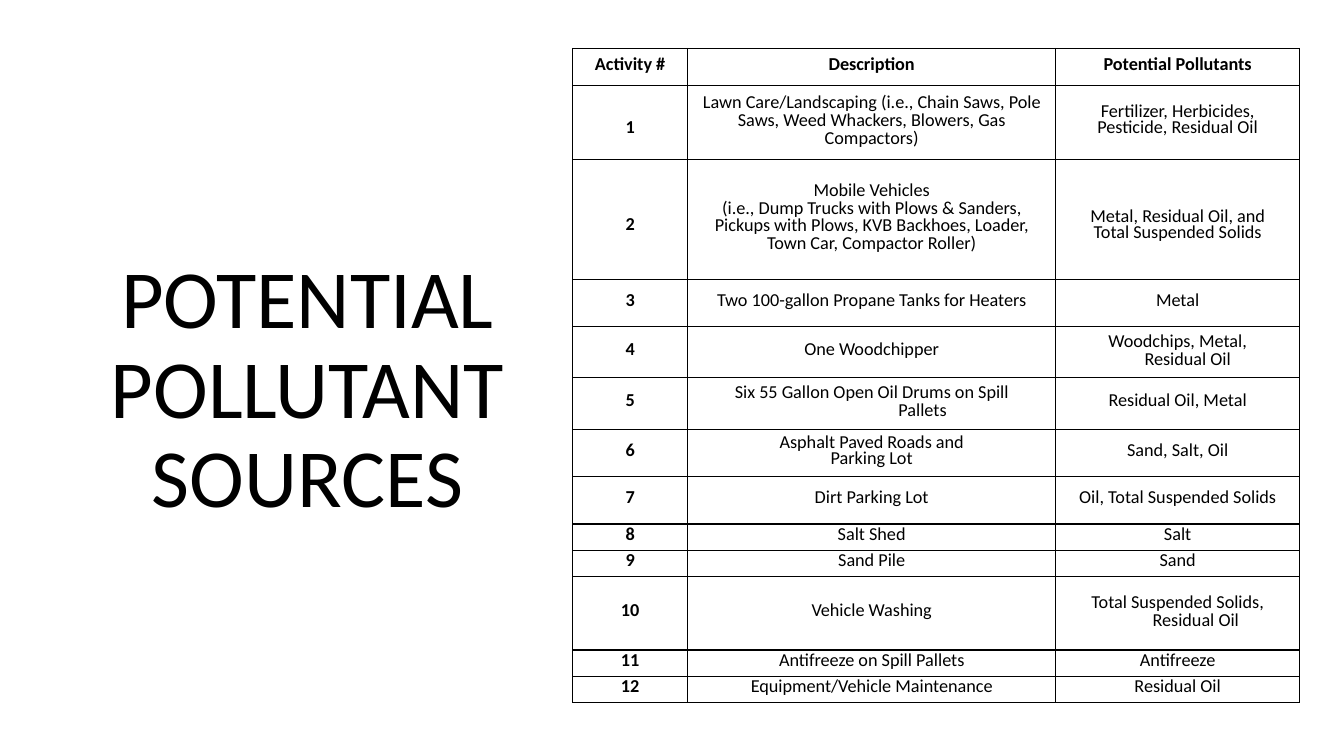
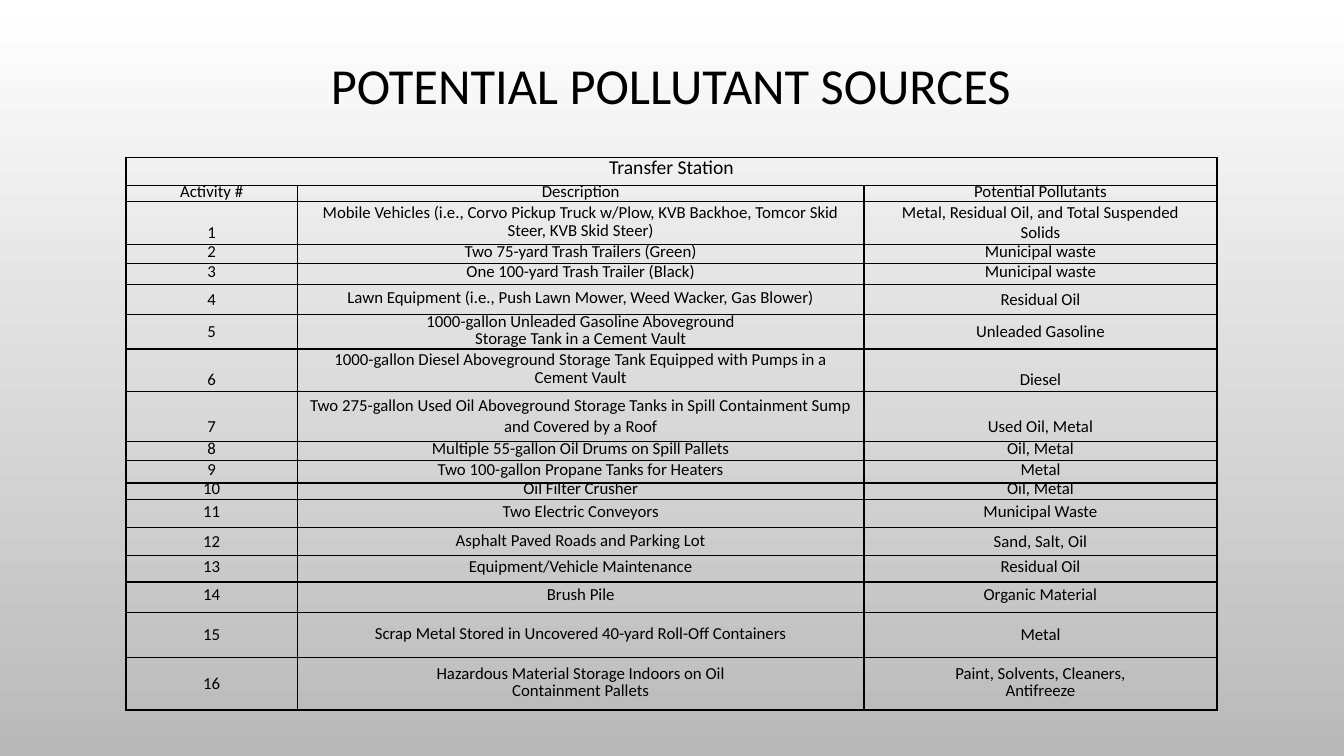
from lxml.etree import SubElement
from pptx import Presentation
from pptx.dml.color import RGBColor
from pptx.enum.text import MSO_ANCHOR, MSO_AUTO_SIZE, PP_ALIGN
from pptx.oxml.ns import qn
from pptx.util import Inches, Pt


def rgb(value):
    return RGBColor.from_string(value)


class Deck:
    FONT = "Calibri"
    INK = "000000"
    BORDER = 1
    LAST_LINE = 11.7
    UPPER_LINE = 12.4

    def __init__(self):
        self.prs = Presentation()
        self.prs.slide_width = Inches(13.33)
        self.prs.slide_height = Inches(7.5)
        self.s = None

    def slide(self, *colors):
        self.s = self.prs.slides.add_slide(self.prs.slide_layouts[5])
        fill = self.s.background.fill
        if len(colors) == 1:
            fill.solid()
            fill.fore_color.rgb = rgb(colors[0])
            return
        fill.gradient()
        fill.gradient_angle = 270
        for i, (stop, color) in enumerate(zip(fill.gradient_stops, colors)):
            stop.position = i
            stop.color.rgb = rgb(color)

    def style(self, p, size, bold=False):
        p.alignment = PP_ALIGN.CENTER
        for r in p.runs:
            r.font.name = self.FONT
            r.font.size = Pt(size)
            r.font.bold = bold
            r.font.color.rgb = rgb(self.INK)

    def title(self, text, box, size, anchor):
        sp = self.s.shapes.title
        sp.left, sp.top, sp.width, sp.height = map(Inches, box)
        tf = sp.text_frame
        tf.text = text
        tf.word_wrap = True
        tf.auto_size = MSO_AUTO_SIZE.NONE
        tf.vertical_anchor = anchor
        tf.paragraphs[0].line_spacing = 0.9
        self.style(tf.paragraphs[0], size)

    def borders(self, cell):
        tcPr = cell._tc.get_or_add_tcPr()
        for side in ("a:lnL", "a:lnR", "a:lnT", "a:lnB"):
            ln = SubElement(tcPr, qn(side), w=str(Pt(self.BORDER)))
            fill = SubElement(ln, qn("a:solidFill"))
            SubElement(fill, qn("a:srgbClr"), val=self.INK)
        cell.fill.background()

    def cell(self, cell, text, size, bold, pad, top=0, hang=0, **spacing):
        self.borders(cell)
        cell.vertical_anchor = MSO_ANCHOR.MIDDLE
        cell.margin_left = cell.margin_right = Inches(pad)
        cell.margin_top, cell.margin_bottom = Inches(top), 0
        tf = cell.text_frame
        tf.text = text
        for p in tf.paragraphs:
            if hang:
                pPr = p._p.get_or_add_pPr()
                pPr.set("marL", str(Inches(hang)))
                pPr.set("indent", str(-Inches(hang)))
            is_last = p.text == tf.paragraphs[-1].text
            line = spacing.get("line", self.LAST_LINE if is_last else self.UPPER_LINE)
            if line:
                p.line_spacing = Pt(line)
            self.style(p, size, bold)

    def table(self, left, top, widths, pads, rows, size, heading=None, bold=False):
        shape = self.s.shapes.add_table(
            len(rows), len(widths), Inches(left), Inches(top),
            Inches(sum(widths)), Inches(sum(row[0] for row in rows)))
        tbl = shape.table
        tbl.first_row = tbl.horz_banding = False
        for column, width in zip(tbl.columns, widths):
            column.width = Inches(width)
        for i, (height, *items) in enumerate(rows):
            tbl.rows[i].height = Inches(height)
            for j, item in enumerate(items):
                text, options = item if isinstance(item, tuple) else (item, {})
                is_strong = bold and (i == 0 or j == 0)
                options = {"size": size, "bold": is_strong, "pad": pads[j], **options}
                self.cell(tbl.cell(i, j), text, **options)
        if heading:
            tbl.cell(0, 0).merge(tbl.cell(0, len(widths) - 1))
            self.cell(tbl.cell(0, 0), heading, 14, False, pads[0])


TITLE = "POTENTIAL POLLUTANT SOURCES"
HEADER = ("Activity #", "Description", "Potential Pollutants")
WRAP = {"line": 12.7}
AUTO = {"line": None}
LOW = {"top": 0.16}
LOWER = {"top": 0.2, "line": None}

FACILITY = [
    (0.37, *HEADER),
    (0.73, ("1", LOW),
     ("Lawn Care/Landscaping (i.e., Chain Saws, Pole Saws, Weed Whackers, "
      "Blowers, Gas Compactors)", WRAP),
     ("Fertilizer, Herbicides, Pesticide, Residual Oil", {"pad": 0.24})),
    (1.19, ("2", LOW),
     ("Mobile Vehicles\n(i.e., Dump Trucks with Plows & Sanders, Pickups with Plows, "
      "KVB Backhoes, Loader, Town Car, Compactor Roller)", {"line": 12.5}),
     ("Metal, Residual Oil, and Total Suspended Solids", {"pad": 0.22, **LOW})),
    (0.47, "3", "Two 100-gallon Propane Tanks for Heaters", "Metal"),
    (0.51, "4", "One Woodchipper",
     ("Woodchips, Metal, Residual Oil", {"pad": 0.36, "hang": 0.2, **WRAP})),
    (0.51, "5",
     ("Six 55 Gallon Open Oil Drums on Spill Pallets",
      {"pad": 0.24, "hang": 1.01, **WRAP}),
     "Residual Oil, Metal"),
    (0.47, "6", "Asphalt Paved Roads and\nParking Lot", "Sand, Salt, Oil"),
    (0.47, "7", "Dirt Parking Lot", "Oil, Total Suspended Solids"),
    (0.26, "8", "Salt Shed", "Salt"),
    (0.26, "9", "Sand Pile", "Sand"),
    (0.73, "10", "Vehicle Washing",
     ("Total Suspended Solids, Residual Oil", {"pad": 0.2, "hang": 0.36, **WRAP})),
    (0.26, "11", "Antifreeze on Spill Pallets", "Antifreeze"),
    (0.26, "12", "Equipment/Vehicle Maintenance", "Residual Oil"),
]

TRANSFER_STATION = [
    (0.28, "", "", ""),
    (0.16, *HEADER),
    (0.42, ("1", LOWER),
     ("Mobile Vehicles (i.e., Corvo Pickup Truck w/Plow, KVB Backhoe, Tomcor Skid "
      "Steer, KVB Skid Steer)", {"pad": 0.2, **WRAP}),
     ("Metal, Residual Oil, and Total Suspended Solids", {"pad": 0.21, **AUTO})),
    (0.19, "2", "Two 75-yard Trash Trailers (Green)", "Municipal waste"),
    (0.21, "3", "One 100-yard Trash Trailer (Black)", "Municipal waste"),
    (0.3, ("4", AUTO),
     ("Lawn Equipment (i.e., Push Lawn Mower, Weed Wacker, Gas Blower)", WRAP),
     ("Residual Oil", AUTO)),
    (0.34, ("5", AUTO),
     "1000-gallon Unleaded Gasoline Aboveground\nStorage Tank in a Cement Vault",
     ("Unleaded Gasoline", AUTO)),
    (0.42, ("6", LOWER),
     ("1000-gallon Diesel Aboveground Storage Tank Equipped with Pumps in a "
      "Cement Vault", {"pad": 0.22, **WRAP}),
     ("Diesel", LOWER)),
    (0.5, ("7", LOWER),
     ("Two 275-gallon Used Oil Aboveground Storage Tanks in Spill Containment Sump "
      "and Covered by a Roof", AUTO),
     ("Used Oil, Metal", LOWER)),
    (0.19, "8", "Multiple 55-gallon Oil Drums on Spill Pallets", "Oil, Metal"),
    (0.22, "9", "Two 100-gallon Propane Tanks for Heaters", "Metal"),
    (0.16, "10", "Oil Filter Crusher", "Oil, Metal"),
    (0.28, "11", "Two Electric Conveyors", "Municipal Waste"),
    (0.28, ("12", AUTO), ("Asphalt Paved Roads and Parking Lot", WRAP),
     ("Sand, Salt, Oil", AUTO)),
    (0.26, "13", "Equipment/Vehicle Maintenance", "Residual Oil"),
    (0.3, "14", "Brush Pile", "Organic Material"),
    (0.45, ("15", AUTO),
     ("Scrap Metal Stored in Uncovered 40-yard Roll-Off Containers", WRAP),
     ("Metal", AUTO)),
    (0.52, ("16", AUTO),
     "Hazardous Material Storage Indoors on Oil\nContainment Pallets",
     "Paint, Solvents, Cleaners,\nAntifreeze"),
]


def main():
    deck = Deck()
    deck.slide("FFFFFF")
    deck.title(TITLE, (0.59, 0.6, 4.92, 4.66), 59, MSO_ANCHOR.BOTTOM)
    deck.table(5.68, 0.48, (1.14, 3.65, 2.42), (0.01, 0.09, 0.07), FACILITY, 13, bold=True)
    deck.slide("FFFFFF", "B9B9B9")
    deck.title(TITLE, (0.99, 0, 11.33, 1.75), 36, MSO_ANCHOR.MIDDLE)
    deck.table(1.25, 1.56, (1.7, 5.62, 3.5), (0.01, 0.07, 0.14), TRANSFER_STATION, 12,
               heading="Transfer Station")
    deck.prs.save("out.pptx")


if __name__ == "__main__":
    main()
